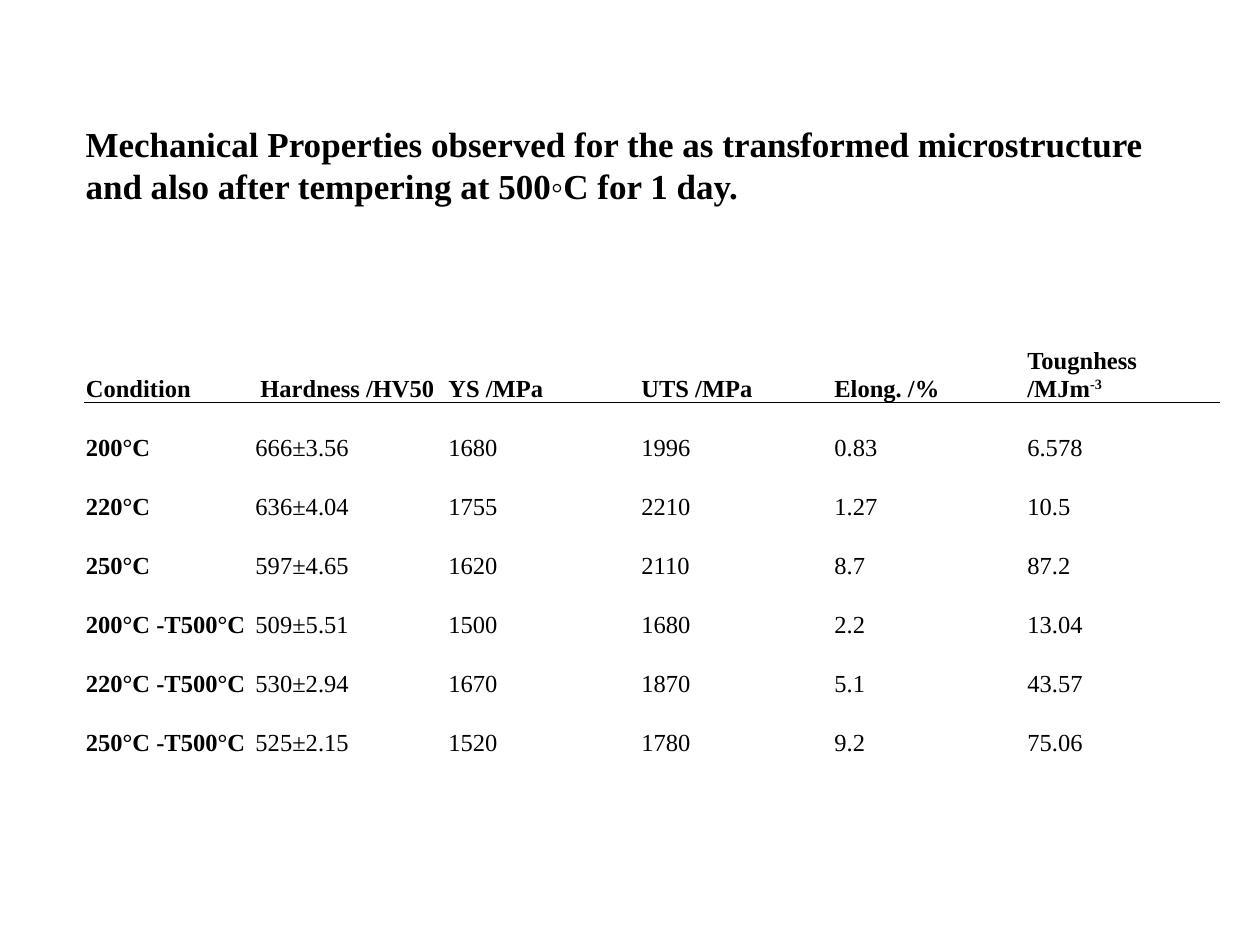
from dataclasses import dataclass

from lxml.etree import SubElement
from pptx import Presentation
from pptx.dml.color import RGBColor
from pptx.enum.text import MSO_ANCHOR as Anchor, MSO_AUTO_SIZE as AutoSize, PP_ALIGN as Align
from pptx.oxml.ns import qn
from pptx.util import Cm, Pt

BLACK = RGBColor(0, 0, 0)
WHITE = RGBColor(255, 255, 255)
FONT = "Times New Roman"

TITLE = ("Mechanical Properties observed for the as transformed microstructure "
         "and also after tempering at 500◦C for 1 day.")
HEADINGS = ("Condition", "Hardness /HV50 ", "YS /MPa", "UTS /MPa",
            "Elong. /%", "Tougnhess /MJm")
UNIT_EXPONENT = "-3"

FIRST_COLUMN, OTHER_COLUMN = Cm(3.42), Cm(3.89)
HEADER_ROW, BODY_ROW = Cm(1.96), Cm(1.19)


@dataclass
class Sample:
    condition: str
    hardness: str
    yield_strength: str
    tensile_strength: str
    elongation: str
    toughness: str

    def values(self) -> tuple:
        return (self.condition, self.hardness, self.yield_strength,
                self.tensile_strength, self.elongation, self.toughness)


@dataclass
class Border:
    color: RGBColor
    width: float


PLAIN = Border(WHITE, 1)
RULE = Border(BLACK, 0.25)

SAMPLES = (
    Sample("200°C", "666±3.56", "1680", "1996", "0.83", "6.578"),
    Sample("220°C", "636±4.04", "1755", "2210", "1.27", "10.5"),
    Sample("250°C", "597±4.65", "1620", "2110", "8.7", "87.2"),
    Sample("200°C -T500°C", "509±5.51", "1500", "1680", "2.2", "13.04"),
    Sample("220°C -T500°C", "530±2.94", "1670", "1870", "5.1", "43.57"),
    Sample("250°C -T500°C", "525±2.15", "1520", "1780", "9.2", "75.06"),
)


def format_runs(paragraph, size: float, bold: bool) -> None:
    for run in paragraph.runs:
        run.font.name = FONT
        run.font.size = Pt(size)
        run.font.bold = bold
        run.font.color.rgb = BLACK


def set_borders(cell, top: Border, bottom: Border) -> None:
    properties = cell._tc.get_or_add_tcPr()
    sides = {"a:lnL": PLAIN, "a:lnR": PLAIN, "a:lnT": top, "a:lnB": bottom}
    for tag, border in sides.items():
        line = SubElement(properties, qn(tag), w=str(Pt(border.width)))
        fill = SubElement(line, qn("a:solidFill"))
        SubElement(fill, qn("a:srgbClr"), val=str(border.color))


def fill_cell(cell, text: str, bold: bool, top: Border, bottom: Border) -> None:
    set_borders(cell, top, bottom)
    cell.fill.background()
    cell.vertical_anchor = Anchor.BOTTOM
    cell.margin_left = cell.margin_right = cell.margin_top = Cm(0.03)
    cell.margin_bottom = 0
    cell.text_frame.text = text
    format_runs(cell.text_frame.paragraphs[0], 14, bold)


def add_title(slide) -> None:
    title = slide.shapes.title
    title.left, title.top, title.width, title.height = Cm(1.47), Cm(2.34), Cm(22.02), Cm(1.96)
    frame = title.text_frame
    frame.text = TITLE
    frame.word_wrap = True
    frame.auto_size = AutoSize.SHAPE_TO_FIT_TEXT
    frame.vertical_anchor = Anchor.TOP
    paragraph = frame.paragraphs[0]
    paragraph.alignment = Align.LEFT
    format_runs(paragraph, 20, True)


def add_property_table(slide) -> None:
    rows = [HEADINGS] + [sample.values() for sample in SAMPLES]
    width = FIRST_COLUMN + OTHER_COLUMN * (len(HEADINGS) - 1)
    height = HEADER_ROW + BODY_ROW * len(SAMPLES)
    table = slide.shapes.add_table(len(rows), len(HEADINGS), Cm(1.7), Cm(6.15),
                                   width, height).table
    table.horz_banding = False
    for index, column in enumerate(table.columns):
        column.width = OTHER_COLUMN if index else FIRST_COLUMN

    for row_index, values in enumerate(rows):
        table.rows[row_index].height = BODY_ROW if row_index else HEADER_ROW
        top = RULE if row_index == 1 else PLAIN
        bottom = RULE if row_index == 0 else PLAIN
        for column_index, text in enumerate(values):
            bold = row_index == 0 or column_index == 0
            fill_cell(table.cell(row_index, column_index), text, bold, top, bottom)

    # Heading details: centred hardness, superscript in the toughness unit
    table.cell(0, 1).text_frame.paragraphs[0].alignment = Align.CENTER
    unit = table.cell(0, len(HEADINGS) - 1).text_frame.paragraphs[0]
    exponent = unit.add_run()
    exponent.text = UNIT_EXPONENT
    format_runs(unit, 14, True)
    exponent.font._element.set("baseline", "30000")


def main() -> None:
    presentation = Presentation()
    presentation.slide_width, presentation.slide_height = Cm(25.4), Cm(19.05)
    slide = presentation.slides.add_slide(presentation.slide_layouts[5])
    add_property_table(slide)
    add_title(slide)
    presentation.save("out.pptx")


if __name__ == "__main__":
    main()
